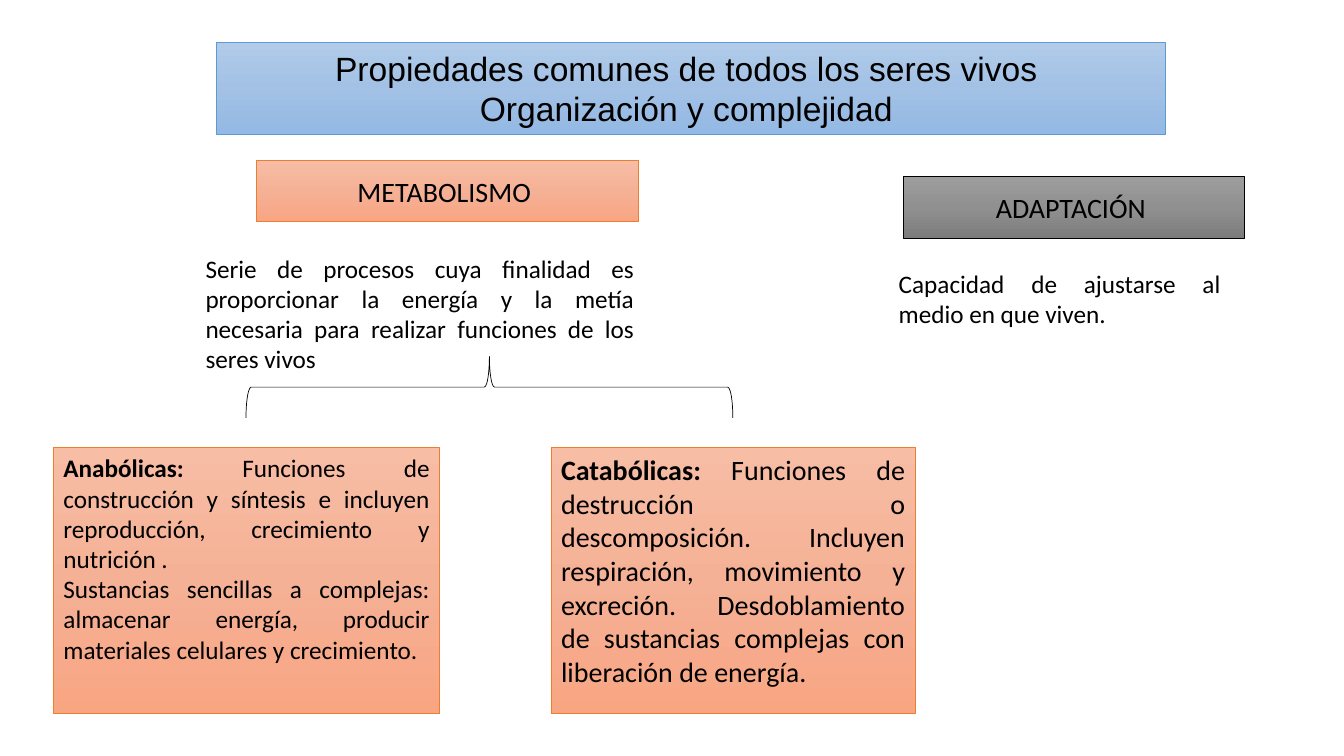
from copy import deepcopy
from dataclasses import dataclass

from pptx import Presentation
from pptx.dml.color import RGBColor as RGB
from pptx.enum.shapes import MSO_SHAPE as Shape
from pptx.enum.text import MSO_ANCHOR as Anchor, MSO_AUTO_SIZE as AutoSize, PP_ALIGN as Align
from pptx.oxml.ns import qn
from pptx.util import Cm, Pt


@dataclass(frozen=True)
class Theme:
    # Each palette: three gradient colours, then the line colour
    blue: tuple = ("B1CBE9", "A3C1E5", "93B9E4", "5B9BD5")
    orange: tuple = ("F7BDA5", "F5B196", "F8A582", "ED7D31")
    grey: tuple = ("9D9D9D", "909090", "7C7C7C", "000000")
    ink: str = "000000"
    line: float = 0.5
    title_font: str = "Arial"
    body_font: str = "Calibri"
    title: int = 24
    large: int = 20
    body: int = 18


T = Theme()

# Content: a paragraph is (bold lead, text); boxes are left, top, width, height in cm
TITLE = [("", "Propiedades comunes de todos los seres vivos "),
         ("", "Organización y complejidad ")]
TITLE_BOX = (5.46, 1.07, 23.9, 2.31)

HEADINGS = [
    ("METABOLISMO ", (6.45, 4.04, 9.65, 1.55), T.orange),
    ("ADAPTACIÓN ", (22.76, 4.45, 8.61, 1.55), T.grey),
]
DEFINITIONS = [
    ("Serie de procesos cuya finalidad es proporcionar la energía y la metía "
     "necesaria para realizar funciones de los seres vivos", (4.93, 6.25, 11.3, 3.33)),
    ("Capacidad de ajustarse al medio en que viven.", (22.4, 6.63, 8.61, 1.8)),
]
PANEL_TOP, PANEL_HEIGHT = 11.28, 6.71
PANELS = [
    (1.35, 9.73, T.body, [
        ("Anabólicas: ", "Funciones de construcción y síntesis e incluyen "
         "reproducción, crecimiento y nutrición ."),
        ("", "Sustancias sencillas a complejas: almacenar energía, producir "
         "materiales celulares y crecimiento.")]),
    (13.89, 9.17, T.large, [
        ("Catabólicas: ", "Funciones de destrucción o descomposición. Incluyen "
         "respiración, movimiento y excreción. Desdoblamiento de sustancias "
         "complejas con liberación de energía.")]),
]
BRACE_BOX = (6.2, 8.98, 12.27, 1.55)  # as seen after rotation


def cm(box):
    return [Cm(v) for v in box]


def set_line(sp, color):
    sp.line.color.rgb = RGB.from_string(color)
    sp.line.width = Pt(T.line)


def paint(sp, palette):
    *colors, line = palette
    sp.fill.gradient()
    sp.fill.gradient_angle = 270
    stops = sp._element.spPr.find(".//" + qn("a:gsLst"))
    stops.insert(1, deepcopy(stops[0]))
    for i, (stop, color) in enumerate(zip(sp.fill.gradient_stops, colors)):
        stop.color.rgb = RGB.from_string(color)
        stop.position = i / 2
    set_line(sp, line)


def write(sp, paragraphs, size, align, font=T.body_font, anchor=Anchor.TOP):
    tf = sp.text_frame
    tf.word_wrap = True
    tf.auto_size = AutoSize.NONE
    tf.vertical_anchor = anchor
    for i, (lead, text) in enumerate(paragraphs):
        p = tf.add_paragraph() if i else tf.paragraphs[0]
        p.alignment = align
        p.line_spacing = 1.0
        p.space_before = Pt(0)
        p.font.name, p.font.size = font, Pt(size)
        p.font.color.rgb = RGB.from_string(T.ink)
        if lead:
            r = p.add_run()
            r.text, r.font.bold = lead, True
        p.add_run().text = text


def add_box(s, box, palette):
    sp = s.shapes.add_shape(Shape.RECTANGLE, *cm(box))
    sp.shadow.inherit = False
    paint(sp, palette)
    return sp


def main():
    prs = Presentation()
    prs.slide_width, prs.slide_height = Cm(33.87), Cm(19.05)
    s = prs.slides.add_slide(prs.slide_layouts[5])

    # Title
    title = s.shapes.title
    title.left, title.top, title.width, title.height = cm(TITLE_BOX)
    paint(title, T.blue)
    write(title, TITLE, T.title, Align.CENTER, T.title_font)

    # Headings and their definitions
    for text, box, palette in HEADINGS:
        write(add_box(s, box, palette), [("", text)], T.large, Align.CENTER,
              anchor=Anchor.MIDDLE)
    for text, box in DEFINITIONS:
        write(s.shapes.add_textbox(*cm(box)), [("", text)], T.body, Align.JUSTIFY)

    # Brace: drawn upright around the same centre, then turned
    x, y, w, h = BRACE_BOX
    brace = s.shapes.add_shape(Shape.RIGHT_BRACE,
                               *cm((x + (w - h) / 2, y + (h - w) / 2, h, w)))
    brace.rotation = 270
    brace.shadow.inherit = False
    brace.fill.background()
    set_line(brace, T.ink)

    # Panels under the brace
    for left, width, size, paragraphs in PANELS:
        sp = add_box(s, (left, PANEL_TOP, width, PANEL_HEIGHT), T.orange)
        write(sp, paragraphs, size, Align.JUSTIFY)

    prs.save("out.pptx")


if __name__ == "__main__":
    main()
